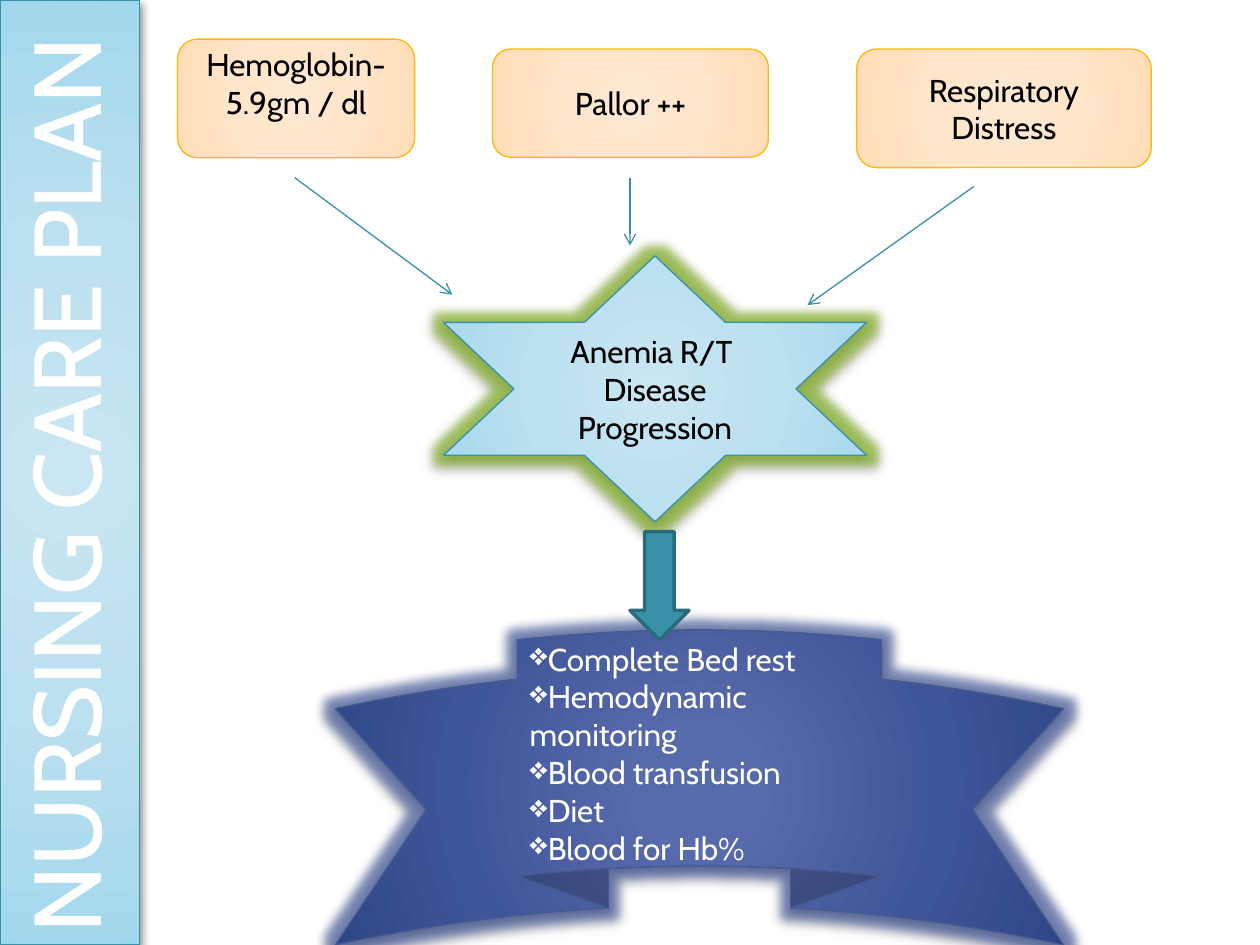
from dataclasses import dataclass

from lxml import etree
from pptx import Presentation
from pptx.dml.color import RGBColor
from pptx.enum.shapes import MSO_CONNECTOR, MSO_SHAPE
from pptx.enum.text import MSO_ANCHOR, PP_ALIGN
from pptx.oxml import parse_xml
from pptx.oxml.ns import qn
from pptx.util import Cm, Pt

RECT, ROUNDED = MSO_SHAPE.RECTANGLE, MSO_SHAPE.ROUNDED_RECTANGLE
STAR, RIBBON = MSO_SHAPE.STAR_6_POINT, MSO_SHAPE.CURVED_UP_RIBBON
DOWN_ARROW = MSO_SHAPE.DOWN_ARROW
STRAIGHT = MSO_CONNECTOR.STRAIGHT
TOP, MIDDLE = MSO_ANCHOR.TOP, MSO_ANCHOR.MIDDLE
LEFT, CENTER = PP_ALIGN.LEFT, PP_ALIGN.CENTER
NS = 'xmlns:a="http://schemas.openxmlformats.org/drawingml/2006/main"'


@dataclass(frozen=True)
class Theme:
    font: str = "Cabin"
    body: int = 18
    title: int = 54
    hairline: float = 0.75
    black: str = "000000"
    white: str = "FFFFFF"
    teal: str = "3891A7"
    dark_teal: str = "296B7C"
    amber: str = "FEB80A"
    indigo: str = "475A8D"
    peach: tuple = ((0, "FFE9D3"), (50, "FFE5C9"), (97, "FFDDB7"), (100, "FFDBB2"))
    sky: tuple = ((0, "C9E6F2"), (50, "BBE0EF"), (97, "A4D8ED"), (100, "9BD7EE"))
    navy: tuple = ((0, "576BAC"), (15, "576AAB"), (62, "3F5599"),
                   (97, "304788"), (100, "264086"))
    # Shadows: colour, opacity %, blur pt, distance pt, direction degrees
    drop: tuple = ("000000", 43, 5, 2, 90)
    edge: tuple = ("736F63", 25, 3, 3, 180)
    # Glows: colour, opacity %, radius pt
    green_glow: tuple = ("84B818", 60, 11)
    blue_glow: tuple = ("2F4A9C", 55, 11)


def color_xml(color, opacity=100):
    return f'<a:srgbClr val="{color}"><a:alpha val="{opacity * 1000}"/></a:srgbClr>'


class CarePlanSlide:
    def __init__(self, slide, theme):
        self.slide = slide
        self.theme = theme

    def shape(self, kind, box, fill, line=None, width=None, shadow=None, glow=None):
        """Add a preset shape; fill is one colour or a tuple of radial stops."""
        item = self.slide.shapes.add_shape(kind, *map(Cm, box))
        item.shadow.inherit = False
        item.fill.solid()
        if isinstance(fill, str):
            item.fill.fore_color.rgb = RGBColor.from_string(fill)
        else:
            self.radial(item, fill)
        if line:
            item.line.color.rgb = RGBColor.from_string(line)
            item.line.width = Pt(width or self.theme.hairline)
        else:
            item.line.fill.background()
        effects = item._element.spPr.find(qn("a:effectLst"))
        if glow:
            color, opacity, radius = glow
            effects.append(parse_xml(
                f'<a:glow {NS} rad="{Pt(radius)}">{color_xml(color, opacity)}</a:glow>'))
        if shadow:
            color, opacity, blur, distance, angle = shadow
            effects.append(parse_xml(
                f'<a:outerShdw {NS} blurRad="{Pt(blur)}" dist="{Pt(distance)}" '
                f'dir="{angle * 60000}" algn="ctr" rotWithShape="0">'
                f'{color_xml(color, opacity)}</a:outerShdw>'))
        return item

    def radial(self, item, stops):
        stops_xml = "".join(f'<a:gs pos="{at * 1000}">{color_xml(color)}</a:gs>'
                            for at, color in stops)
        gradient = parse_xml(
            f'<a:gradFill {NS} rotWithShape="1"><a:gsLst>{stops_xml}</a:gsLst>'
            '<a:path path="circle"><a:fillToRect l="50000" t="50000" r="50000" '
            'b="50000"/></a:path></a:gradFill>')
        properties = item._element.spPr
        properties.replace(properties.find(qn("a:solidFill")), gradient)

    def text(self, item, lines, color, size=None, align=CENTER, anchor=MIDDLE, bullet=None):
        """Write one paragraph per line and return the runs."""
        frame = item.text_frame
        frame.word_wrap = True
        frame.vertical_anchor = anchor
        runs = []
        for index, line in enumerate(lines):
            paragraph = frame.add_paragraph() if index else frame.paragraphs[0]
            paragraph.alignment = align
            if bullet:
                mark = etree.SubElement(paragraph._p.get_or_add_pPr(), qn("a:buChar"))
                mark.set("char", bullet)
            run = paragraph.add_run()
            run.text = line
            run.font.name = self.theme.font
            run.font.size = Pt(size or self.theme.body)
            run.font.color.rgb = RGBColor.from_string(color)
            runs.append(run)
        return runs

    def arrow(self, start, end):
        link = self.slide.shapes.add_connector(STRAIGHT, *map(Cm, start + end))
        link.line.color.rgb = RGBColor.from_string(self.theme.teal)
        link.line.width = Pt(self.theme.hairline)
        etree.SubElement(link.line._get_or_add_ln(), qn("a:tailEnd")).set("type", "arrow")
        etree.SubElement(link._element.spPr, qn("a:effectLst"))

    def sidebar(self, title, box):
        t = self.theme
        band = self.shape(RECT, box, t.sky, t.teal, shadow=t.drop)
        heading = self.text(band, [title], t.white, t.title, LEFT, TOP)[0]
        band.text_frame._txBody.bodyPr.set("vert", "vert270")
        heading._r.get_or_add_rPr().insert(0, parse_xml(
            f'<a:ln {NS} w="{Pt(1.45)}"><a:solidFill>{color_xml(t.white)}'
            '</a:solidFill></a:ln>'))


def main():
    theme = Theme()
    deck = Presentation()
    deck.slide_width, deck.slide_height = Cm(25.4), Cm(19.05)
    plan = CarePlanSlide(deck.slides.add_slide(deck.slide_layouts[6]), theme)

    # Strip beside the title band
    plan.shape(RECT, (2.82, 0, 0.2, 19.05), theme.white, shadow=theme.edge)

    # Findings
    findings = [
        (("Hemoglobin-", "5.9gm / dl"), (3.58, 0.79, 4.78, 2.39), TOP),
        (("Pallor ++",), (9.93, 0.99, 5.56, 2.18), MIDDLE),
        (("Respiratory", "Distress"), (17.27, 0.99, 5.94, 2.39), MIDDLE),
    ]
    for lines, box, anchor in findings:
        finding = plan.shape(ROUNDED, box, theme.peach, theme.amber)
        plan.text(finding, lines, theme.black, anchor=anchor)
        if anchor == TOP:
            finding.text_frame.margin_top = 0

    # Diagnosis
    diagnosis = plan.shape(STAR, (8.94, 5.16, 8.53, 5.36), theme.sky, theme.teal,
                           shadow=theme.drop, glow=theme.green_glow)
    plan.text(diagnosis, ["Anemia R/T ", "Disease Progression"], theme.black)

    # Interventions
    care = plan.shape(RIBBON, (6.76, 12.7, 14.68, 6.35), theme.navy, theme.indigo,
                      shadow=theme.drop, glow=theme.blue_glow)
    plan.text(care, ["Complete Bed rest", "Hemodynamic monitoring", "Blood transfusion",
                     "Diet", "Blood for Hb%"], theme.white, align=LEFT, bullet="❖")

    # Arrows from findings to diagnosis to interventions
    for start, end in [((5.94, 3.58), (9.12, 5.94)),
                       ((12.7, 3.58), (12.7, 4.95)),
                       ((19.63, 3.76), (16.28, 6.15))]:
        plan.arrow(start, end)
    plan.shape(DOWN_ARROW, (12.7, 10.72, 1.19, 2.18), theme.teal, theme.dark_teal, 2)

    # Title band
    plan.sidebar("NURSING CARE PLAN", (0, 0, 2.82, 19.05))

    deck.save("out.pptx")


if __name__ == "__main__":
    main()
